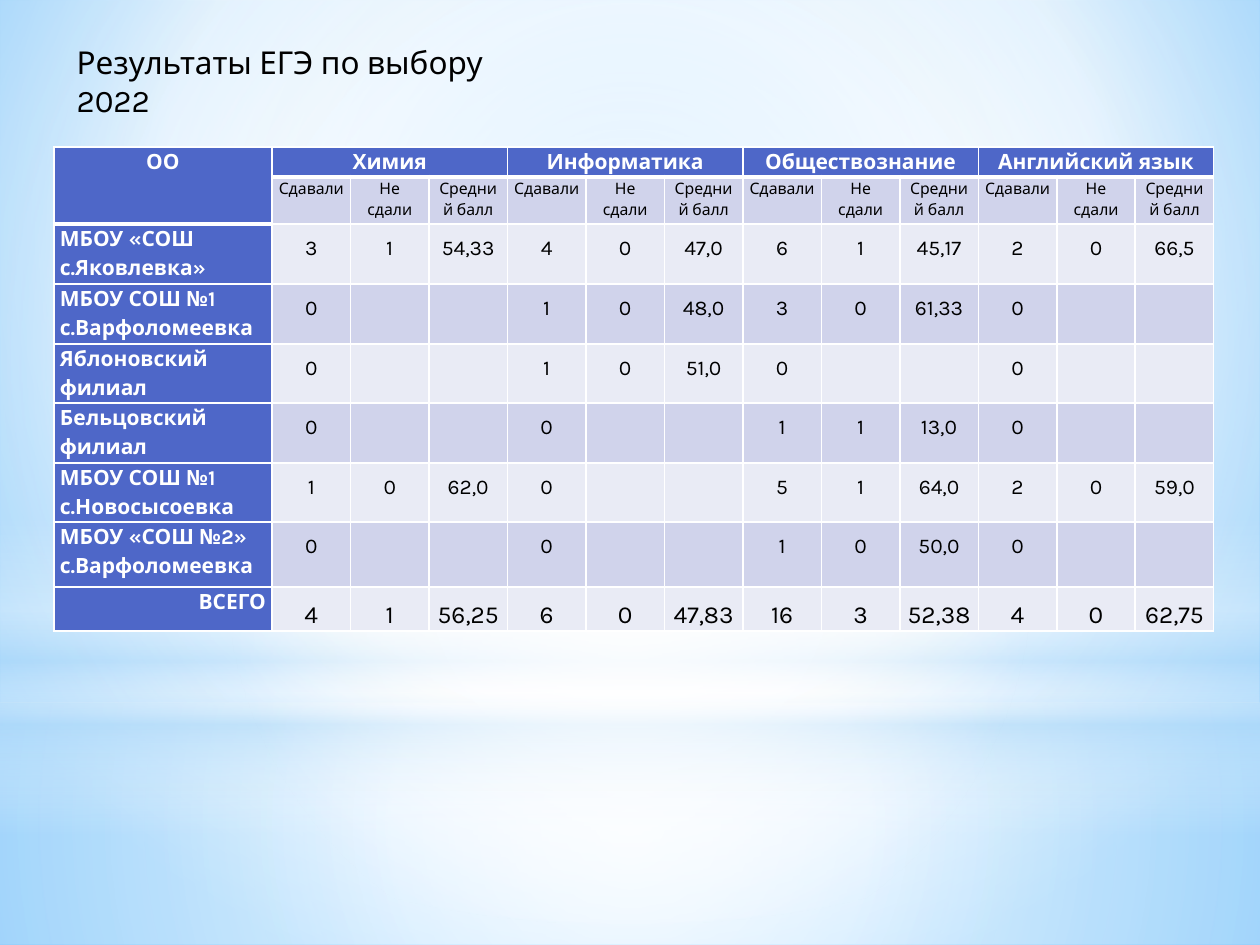
from dataclasses import dataclass

from lxml.etree import SubElement
from pptx import Presentation
from pptx.dml.color import RGBColor
from pptx.enum.shapes import MSO_SHAPE
from pptx.enum.text import MSO_ANCHOR, MSO_AUTO_SIZE, PP_ALIGN
from pptx.oxml.ns import qn
from pptx.util import Emu, Pt


@dataclass(frozen=True)
class Theme:
    """Colours, font and type sizes of the slide."""

    font: str = "Karla"
    ink: str = "000000"
    white: str = "FFFFFF"
    sky: str = "B4DCFA"
    header: str = "4E67C8"
    band_dark: str = "D0D3EB"
    band_light: str = "E9EBF5"
    title_size: int = 18
    total_size: int = 14
    body_size: int = 12
    label_size: int = 9


THEME = Theme()
PX_PER_INCH = 126
CENTRE = (50, 50, 50, 50)

TITLE = "Результаты ЕГЭ по выбору 2022"
SUBJECTS = ["Химия", "Информатика", "Обществознание", "Английский язык"]
MEASURES = ["Сдавали", "Не сдали", "Средний балл"]
RESULTS = [
    ("МБОУ «СОШ с.Яковлевка»", "3|1|54,33|4|0|47,0|6|1|45,17|2|0|66,5"),
    ("МБОУ СОШ №1 с.Варфоломеевка", "0|||1|0|48,0|3|0|61,33|0||"),
    ("Яблоновский филиал", "0|||1|0|51,0|0|||0||"),
    ("Бельцовский филиал", "0|||0|||1|1|13,0|0||"),
    ("МБОУ СОШ №1 с.Новосысоевка", "1|0|62,0|0|||5|1|64,0|2|0|59,0"),
    ("МБОУ «СОШ №2» с.Варфоломеевка", "0|||0|||1|0|50,0|0||"),
    ("ВСЕГО", "4|1|56,25|6|0|47,83|16|3|52,38|4|0|62,75"),
]
ROW_HEIGHTS = [30, 47, 60, 60, 59, 60, 59, 65, 44]
TABLE_BOX = (54, 147, 1160, sum(ROW_HEIGHTS))
NAME_WIDTH = 218


def px(length):
    """Turn slide pixels into EMU."""
    return Emu(round(length * 914400 / PX_PER_INCH))


def set_gradient(fill, owner, stops, focus=None):
    """Fill with a radial gradient towards focus, or a downward linear one."""
    fill.gradient()
    gradient = next(owner.iter(qn("a:gradFill")))
    gradient.clear()
    gradient.set("rotWithShape", "1")
    stop_list = SubElement(gradient, qn("a:gsLst"))
    for position, colour, opacity in stops:
        stop = SubElement(stop_list, qn("a:gs"), pos=str(position * 1000))
        paint = SubElement(stop, qn("a:srgbClr"), val=colour)
        if opacity < 100:
            SubElement(paint, qn("a:alpha"), val=str(opacity * 1000))
    if focus:
        radial = SubElement(gradient, qn("a:path"))
        radial.set("path", "circle")
        sides = {side: str(share * 1000) for side, share in zip("ltrb", focus)}
        SubElement(radial, qn("a:fillToRect"), **sides)
    else:
        SubElement(gradient, qn("a:lin"), ang="5400000", scaled="0")


def add_glow(page, preset, box, stops, focus=None):
    """Add a borderless translucent gradient shape."""
    shape = page.shapes.add_shape(preset, *map(px, box))
    shape.shadow.inherit = False
    shape.line.fill.background()
    set_gradient(shape.fill, shape.element, stops, focus)


def add_backdrop(page):
    """Paint the sky background and its layers of light."""
    white, sky = THEME.white, THEME.sky
    set_gradient(page.background.fill, page.element,
                 [(0, "9ED5FF", 100), (60, white, 100), (100, "5BB9FF", 100)], (20, 10, 20, 60))
    add_glow(page, MSO_SHAPE.RECTANGLE, (0, 703, 1260, 242),
             [(0, white, 91), (37, white, 76), (100, sky, 79)], CENTRE)
    add_glow(page, MSO_SHAPE.RECTANGLE, (0, 0, 1260, 703),
             [(0, white, 89), (48, white, 62), (100, sky, 79)], CENTRE)
    add_glow(page, MSO_SHAPE.RECTANGLE, (0, 519, 1260, 315),
             [(0, white, 0), (29, white, 30), (45, sky, 40),
              (55, white, 26), (65, sky, 60), (100, white, 0)])
    add_glow(page, MSO_SHAPE.OVAL, (0, 220, 1260, 703),
             [(0, white, 100), (56, white, 0)], CENTRE)


def format_text(para, size, colour, bold=False, align=PP_ALIGN.LEFT):
    """Format a paragraph and its runs."""
    para.alignment = align
    for span in para.runs:
        span.font.name = THEME.font
        span.font.size = Pt(size)
        span.font.bold = bold
        span.font.color.rgb = RGBColor.from_string(colour)


def add_title(page):
    """Place the title above the backdrop."""
    title = page.shapes.title
    title.left, title.top, title.width, title.height = map(px, (64, 37, 490, 50))
    frame = title.text_frame
    frame.text = TITLE
    frame.word_wrap = True
    frame.auto_size = MSO_AUTO_SIZE.SHAPE_TO_FIT_TEXT
    frame.vertical_anchor = MSO_ANCHOR.TOP
    format_text(frame.paragraphs[0], THEME.title_size, THEME.ink)
    page.shapes.element.append(title.element)


def set_borders(cell, top, bottom):
    """Draw white cell borders with the given top and bottom widths."""
    properties = cell._tc.get_or_add_tcPr()
    for side, width in zip("LRTB", (1, 1, top, bottom)):
        line = SubElement(properties, qn(f"a:ln{side}"), w=str(Pt(width)))
        paint = SubElement(line, qn("a:solidFill"))
        SubElement(paint, qn("a:srgbClr"), val=THEME.white)


def style_cell(cell, row, column):
    """Give a cell its borders, margins and fill by its place."""
    header_end = 1 if column == 0 else 0
    set_borders(cell, 3 if row == header_end + 1 else 1, 3 if row <= header_end else 1)
    cell.margin_left = cell.margin_right = px(6)
    cell.margin_top = cell.margin_bottom = 0
    band = THEME.band_dark if row % 2 else THEME.band_light
    cell.fill.solid()
    cell.fill.fore_color.rgb = RGBColor.from_string(THEME.header if row == 0 or column == 0 else band)


def write_cell(cell, text, size, heading=False, align=PP_ALIGN.CENTER, spacing=1.15, before=0, after=0):
    """Write one formatted line of text into a cell."""
    cell.text_frame.text = text
    para = cell.text_frame.paragraphs[0]
    para.line_spacing = spacing
    para.space_before, para.space_after = Pt(before), Pt(after)
    format_text(para, size, THEME.white if heading else THEME.ink, heading, align)


def write_headings(table):
    """Write the merged subject headings and the measure labels."""
    table.cell(0, 0).merge(table.cell(1, 0))
    write_cell(table.cell(0, 0), "ОО", THEME.body_size, True)
    for index, subject in enumerate(SUBJECTS):
        first = 1 + index * len(MEASURES)
        table.cell(0, first).merge(table.cell(0, first + len(MEASURES) - 1))
        write_cell(table.cell(0, first), subject, THEME.body_size, True)
        for column, measure in enumerate(MEASURES, first):
            write_cell(table.cell(1, column), measure, THEME.label_size, before=6, after=6)


def write_results(table):
    """Write one row for each school and the total."""
    for row, (school, values) in enumerate(RESULTS, 2):
        total = row == len(RESULTS) + 1
        gap = 6 if total else 0
        write_cell(table.cell(row, 0), school, THEME.body_size, True,
                   PP_ALIGN.RIGHT if total else PP_ALIGN.LEFT, before=gap, after=gap)
        for column, value in enumerate(values.split("|"), 1):
            if value:
                size = THEME.total_size if total else THEME.body_size
                write_cell(table.cell(row, column), value, size, spacing=1.5, before=6)


def add_results_table(page):
    """Add the table of exam results."""
    value_columns = len(SUBJECTS) * len(MEASURES)
    table = page.shapes.add_table(len(ROW_HEIGHTS), value_columns + 1, *map(px, TABLE_BOX)).table
    table.first_row = table.horz_banding = False
    value_width = (TABLE_BOX[2] - NAME_WIDTH) / value_columns
    for index, column in enumerate(table.columns):
        column.width = px(value_width if index else NAME_WIDTH)
    for row, height in zip(table.rows, ROW_HEIGHTS):
        row.height = px(height)
    for index, cell in enumerate(table.iter_cells()):
        style_cell(cell, *divmod(index, value_columns + 1))
    write_headings(table)
    write_results(table)


def main():
    """Build and save the deck."""
    deck = Presentation()
    deck.slide_width, deck.slide_height = px(1260), px(945)
    page = deck.slides.add_slide(deck.slide_layouts[5])
    add_backdrop(page)
    add_title(page)
    add_results_table(page)
    deck.save("out.pptx")


if __name__ == "__main__":
    main()
